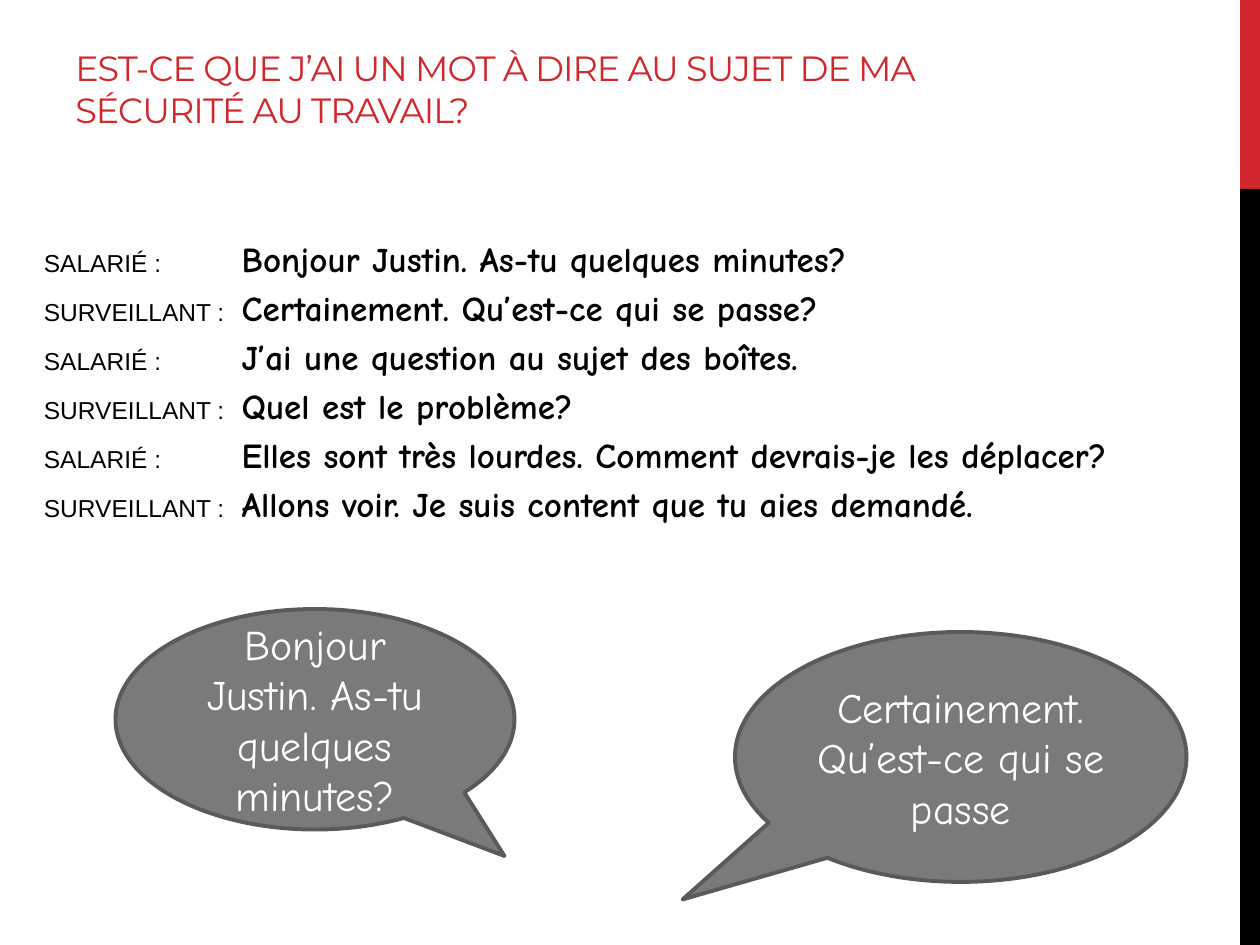
from pptx import Presentation
from pptx.dml.color import RGBColor
from pptx.enum.shapes import MSO_SHAPE
from pptx.enum.text import MSO_ANCHOR, PP_ALIGN
from pptx.util import Inches, Pt

RECT = MSO_SHAPE.RECTANGLE
BUBBLE = MSO_SHAPE.OVAL_CALLOUT
TOP, MIDDLE, BOTTOM = MSO_ANCHOR.TOP, MSO_ANCHOR.MIDDLE, MSO_ANCHOR.BOTTOM
CENTER = PP_ALIGN.CENTER
COLORS = {
    "red": "D1282E",
    "black": "000000",
    "white": "FFFFFF",
    "gray": "7A7A7A",
    "edge": "5A5A5A",
}
SPEECH = "Comic Neue"
ROLES = ("SALARIÉ :", "SURVEILLANT :")
LINES = (
    "Bonjour Justin. As-tu quelques minutes?",
    "Certainement. Qu’est-ce qui se passe?",
    "J’ai une question au sujet des boîtes.",
    "Quel est le problème?",
    "Elles sont très lourdes. Comment devrais-je les déplacer?",
    "Allons voir. Je suis content que tu aies demandé.",
)


class Page:
    """Draws styled elements on a slide grid of 120 columns by 90 rows."""

    def __init__(self, deck):
        self.slide = deck.slides.add_slide(deck.slide_layouts[6])
        self.col = deck.slide_width / 120
        self.row = deck.slide_height / 90

    def place(self, x, y, w, h):
        return [round(n) for n in
                (x * self.col, y * self.row, w * self.col, h * self.row)]

    def color(self, name):
        return RGBColor.from_string(COLORS[name])

    def style(self, run, size, face, tint="black", bold=False):
        font = run.font
        font.size, font.name, font.bold = Pt(size), face, bold
        font.color.rgb = self.color(tint)

    def shape(self, kind, box, fill):
        shape = self.slide.shapes.add_shape(kind, *self.place(*box))
        shape.shadow.inherit = False
        shape.fill.solid()
        shape.fill.fore_color.rgb = self.color(fill)
        shape.line.fill.background()
        return shape

    def frame(self, box, anchor):
        frame = self.slide.shapes.add_textbox(*self.place(*box)).text_frame
        frame.word_wrap = True
        frame.vertical_anchor = anchor
        return frame

    def title(self, box, text):
        frame = self.frame(box, BOTTOM)
        frame.text = text
        run = frame.paragraphs[0].runs[0]
        self.style(run, 20, "Montserrat", "red")
        run.font._element.set("spc", "-60")

    def dialogue(self, box, lines):
        frame = self.frame(box, TOP)
        frame.text = "\n".join(ROLES[i % 2] for i in range(len(lines)))
        indent = Inches(1.57)
        for para, line in zip(frame.paragraphs, lines):
            para.space_before = Pt(4)
            props = para._p.get_or_add_pPr()
            props.set("marL", str(indent))
            props.set("indent", str(-indent))
            self.style(para.runs[0], 14, "Arial")
            for text, face in (("\t", "Arial"), (line, SPEECH)):
                run = para.add_run()
                run.text = text
                self.style(run, 20, face, bold=True)

    def bubble(self, box, tip, text):
        shape = self.shape(BUBBLE, box, "gray")
        shape.line.color.rgb = self.color("edge")
        shape.line.width = Pt(2.25)
        for i, share in enumerate(tip):
            shape.adjustments[i] = share
        frame = shape.text_frame
        frame.word_wrap = True
        frame.vertical_anchor = MIDDLE
        frame.text = text
        para = frame.paragraphs[0]
        para.alignment = CENTER
        self.style(para.runs[0], 24, SPEECH, "white")


def main():
    deck = Presentation()
    deck.slide_width, deck.slide_height = Inches(10), Inches(7.5)
    page = Page(deck)
    page.shape(RECT, (118.1, 0, 1.9, 18), "red")
    page.shape(RECT, (118.1, 18, 1.9, 72), "black")
    page.title((6, 3, 91, 10),
               "EST-CE QUE J’AI UN MOT À DIRE AU SUJET DE MA SÉCURITÉ AU TRAVAIL?")
    page.dialogue((3, 22, 114, 57.4), LINES)
    page.bubble((11, 58, 38, 21), (0.475, 0.62), LINES[0])
    page.bubble((70, 60.2, 43, 23.8), (-0.616, 0.57), LINES[1].rstrip("?"))
    deck.save("out.pptx")


if __name__ == "__main__":
    main()
